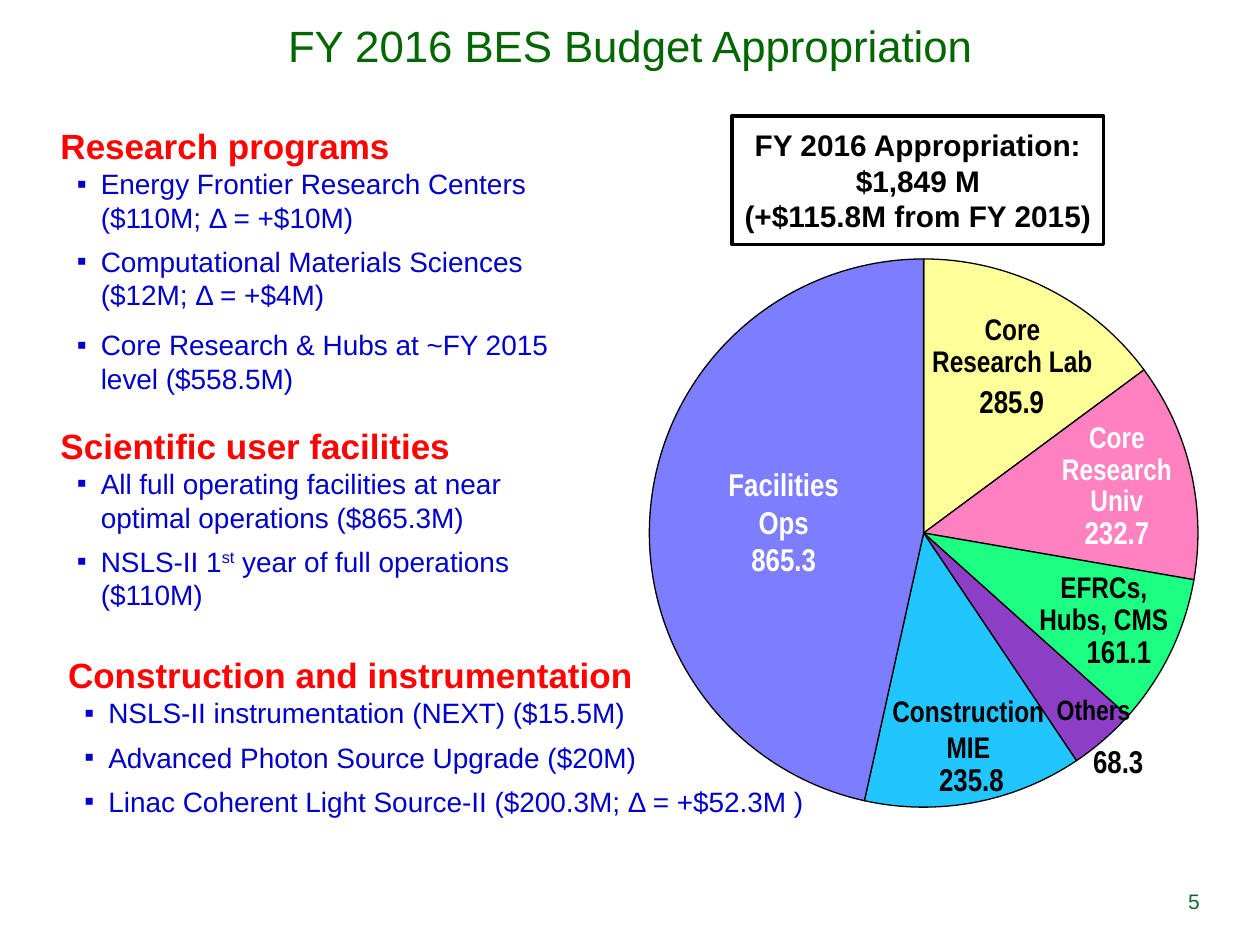
from lxml import etree
from pptx import Presentation
from pptx.chart.data import CategoryChartData
from pptx.dml.color import RGBColor
from pptx.enum.chart import XL_CHART_TYPE
from pptx.enum.shapes import MSO_SHAPE
from pptx.enum.text import MSO_ANCHOR, PP_ALIGN
from pptx.oxml import parse_xml
from pptx.oxml.ns import nsdecls, qn
from pptx.util import Inches, Pt

PIE = XL_CHART_TYPE.PIE
RECTANGLE = MSO_SHAPE.RECTANGLE
TOP, MIDDLE = MSO_ANCHOR.TOP, MSO_ANCHOR.MIDDLE
LEFT, CENTER, RIGHT = PP_ALIGN.LEFT, PP_ALIGN.CENTER, PP_ALIGN.RIGHT

BLACK, WHITE, RED, BLUE = "000000", "FFFFFF", "FF0303", "0000CC"
SHARES = [15, 13, 9, 4, 13, 47]
SLICE_COLORS = ["FFFF99", "FF81C0", "1DFF83", "8C3EC6", "21C5FF", "7D7DFF"]

SLICE_LABELS = [
    ((5.4, 3.64, 1.64, 1.01), "Facilities\nOps\n865.3", 18, WHITE, None),
    ((7.26, 2.45, 1.55, 0.65), "Core Research Lab", 17, BLACK, 0.9),
    ((7.44, 2.98, 1.18, 0.41), "285.9", 18, BLACK, None),
    ((8.05, 4.5, 1.42, 0.66), "EFRCs, Hubs, CMS", 17, BLACK, 0.9),
    ((7.76, 5.45, 1.84, 0.47), "Others", 16, BLACK, None),
    ((6.74, 5.45, 1.89, 1.02), "Construction\nMIE", 17, BLACK, None),
    ((8.29, 4.97, 1.18, 0.41), "161.1", 18, BLACK, None),
    ((7.17, 5.98, 1.08, 0.39), "235.8", 18, BLACK, None),
    ((8.13, 3.31, 1.47, 0.65), "Core Research\nUniv\n232.7", 17, WHITE, Pt(18)),
    ((8.57, 5.84, 0.61, 0.4), "68.3", 18, BLACK, None),
]

RESEARCH = ("Research programs", [
    ["Energy Frontier Research Centers ($110M; Δ = +$10M)"],
    ["Computational Materials Sciences ($12M; Δ = +$4M)"],
    ["Core Research & Hubs at ~FY 2015 level ($558.5M)"],
])
FACILITIES = ("Scientific user facilities", [
    ["All full operating facilities at near optimal operations ($865.3M)"],
    ["NSLS-II 1", "st", " year of full operations ($110M)"],
])
CONSTRUCTION = ("Construction and instrumentation", [
    ["NSLS-II instrumentation (NEXT) ($15.5M)"],
    ["Advanced Photon Source Upgrade ($20M)"],
    ["Linac Coherent Light Source-II ($200.3M; Δ = +$52.3M )"],
])


def rgb(value):
    return RGBColor.from_string(value)


def place(shape, box):
    shape.left, shape.top, shape.width, shape.height = map(Inches, box)


def set_frame(frame, side=0.1, end=0.05, anchor=TOP, wrap=True):
    frame.margin_left = frame.margin_right = Inches(side)
    frame.margin_top = frame.margin_bottom = Inches(end)
    frame.vertical_anchor = anchor
    frame.word_wrap = wrap


def style(font, size, color, bold=False, name="Arial"):
    font.name, font.size, font.bold = name, Pt(size), bold
    font.color.rgb = rgb(color)


def format_text(frame, text, align, size, color, bold=False, name="Arial"):
    frame.text = text
    for para in frame.paragraphs:
        para.alignment = align
        for span in para.runs:
            style(span.font, size, color, bold, name)


def add_title(page, box):
    title = page.shapes.title
    place(title, box)
    set_frame(title.text_frame, end=0.09)
    format_text(title.text_frame, "FY 2016 BES Budget Appropriation", CENTER, 25, "006600")


def add_pie(page, box):
    data = CategoryChartData()
    data.categories = [str(number + 1) for number in range(len(SHARES))]
    data.add_series("Series 1", SHARES)
    chart = page.shapes.add_chart(PIE, *map(Inches, box), data).chart
    chart.has_title = chart.has_legend = False
    style(chart.font, 10, BLACK, name="Calibri")
    plot = chart.plots[0]
    plot.vary_by_categories = True
    for index, color in enumerate(SLICE_COLORS):
        form = plot.series[0].points[index].format
        form.fill.solid()
        form.fill.fore_color.rgb = rgb(color)
        form.line.color.rgb = rgb(BLACK)
        form.line.width = Pt(0.75)
    plot_area = chart._chartSpace.chart.plotArea
    for old in plot_area.findall(qn("c:layout")):
        plot_area.remove(old)
    plot_area.insert(0, parse_xml(
        f'<c:layout {nsdecls("c")}><c:manualLayout><c:layoutTarget val="inner"/>'
        '<c:xMode val="edge"/><c:yMode val="edge"/><c:x val="0.113"/><c:y val="0"/>'
        '<c:w val="0.802"/><c:h val="0.954"/></c:manualLayout></c:layout>'))


def add_slice_label(page, box, text, size, color, spacing):
    frame = page.shapes.add_textbox(*map(Inches, box)).text_frame
    set_frame(frame, wrap=text != "68.3")
    format_text(frame, text, CENTER, size, color, True, "Arial Narrow")
    if spacing:
        for para in frame.paragraphs:
            para.line_spacing = spacing
    if text.endswith("232.7"):
        total = frame.paragraphs[-1]
        total.line_spacing = 0.9
        total.runs[0].font.size = Pt(18)


def add_total(page, box):
    shape = page.shapes.add_shape(RECTANGLE, *map(Inches, box))
    shape.shadow.inherit = False
    shape.fill.background()
    shape.line.color.rgb = rgb(BLACK)
    shape.line.width = Pt(2)
    set_frame(shape.text_frame, 0.08, 0.08, MIDDLE)
    format_text(shape.text_frame,
                "FY 2016 Appropriation:\n$1,849 M\n(+$115.8M from FY 2015)",
                CENTER, 17, BLACK, True)


def add_bullet(para, spans):
    para.level = 1
    properties = para._p.get_or_add_pPr()
    properties.set("marL", str(Inches(0.32)))
    properties.set("indent", str(Inches(-0.19)))
    etree.SubElement(properties, qn("a:buFont")).set("typeface", "Arial")
    etree.SubElement(properties, qn("a:buChar")).set("char", "▪")
    para.space_after = Pt(6)
    for index, text in enumerate(spans):
        span = para.add_run()
        span.text = text
        style(span.font, 16, BLUE)
        if index % 2:
            span._r.get_or_add_rPr().set("baseline", "30000")


def add_programs(page, box, sections):
    frame = page.shapes.add_textbox(*map(Inches, box)).text_frame
    set_frame(frame, 0.09, 0.04)
    for index, (heading, items) in enumerate(sections):
        para = frame.add_paragraph() if index else frame.paragraphs[0]
        para.text = heading
        para.alignment = LEFT
        style(para.runs[0].font, 20, RED, True)
        if index:
            para.space_before = Pt(11)
        for spans in items:
            add_bullet(frame.add_paragraph(), spans)
        if heading == RESEARCH[0]:
            frame.paragraphs[-1].space_before = Pt(3.2)


def add_page_number(page, box):
    frame = page.shapes.add_textbox(*map(Inches, box)).text_frame
    set_frame(frame, anchor=MIDDLE)
    format_text(frame, "5", RIGHT, 12, "106636")


def main():
    deck = Presentation()
    deck.slide_width, deck.slide_height = Inches(10), Inches(7.5)
    page = deck.slides.add_slide(deck.slide_layouts[5])
    add_pie(page, (4.54, 2.05, 5.43, 4.57))
    add_title(page, (0, 0.06, 10, 0.67))
    for label in SLICE_LABELS:
        add_slice_label(page, *label)
    add_total(page, (5.81, 0.92, 2.95, 1.02))
    add_programs(page, (0.39, 0.95, 4.36, 4.64), [RESEARCH, FACILITIES])
    add_programs(page, (0.45, 5.15, 8.83, 2.19), [CONSTRUCTION])
    add_page_number(page, (9.1, 6.95, 0.52, 0.4))
    deck.save("out.pptx")


if __name__ == "__main__":
    main()
